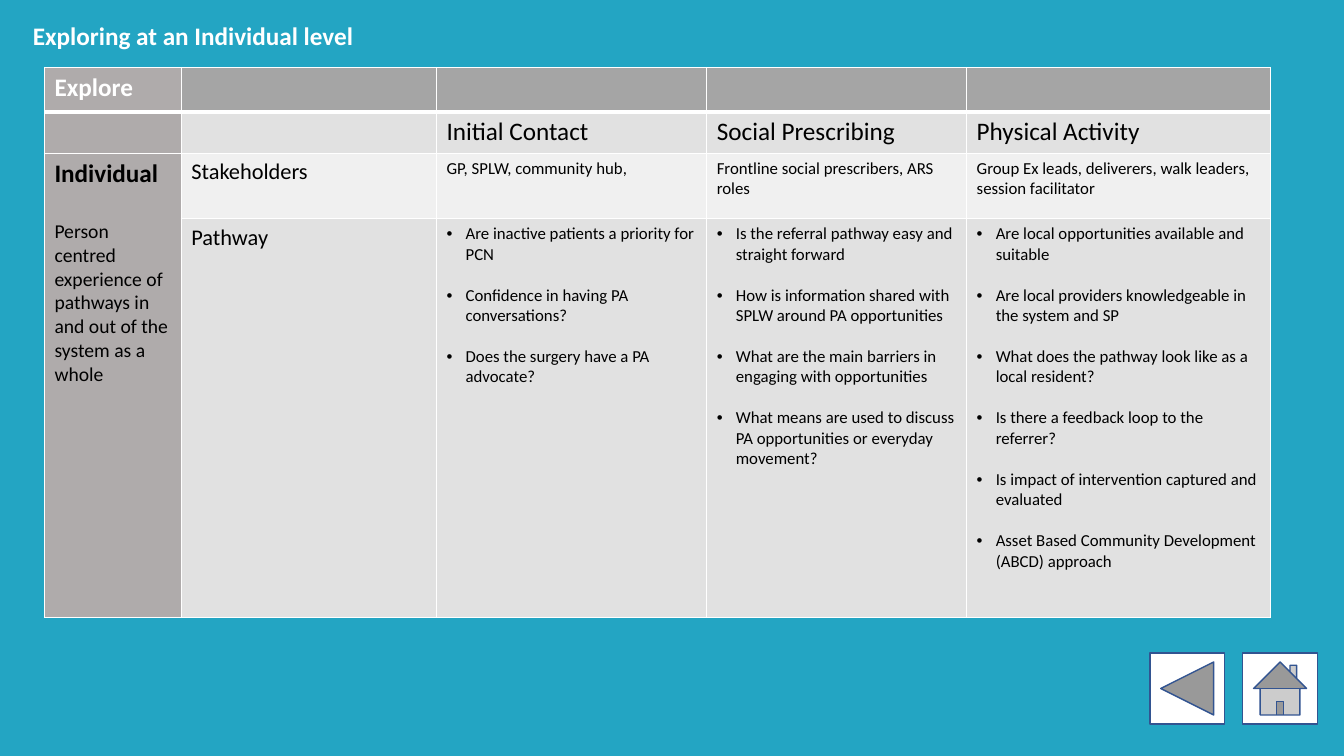
"""Build the slide on exploring social prescribing at an individual level."""
from lxml import etree
from pptx import Presentation
from pptx.dml.color import RGBColor
from pptx.enum.shapes import MSO_SHAPE
from pptx.oxml.ns import qn
from pptx.util import Cm, Pt

HOME = MSO_SHAPE.ACTION_BUTTON_HOME
BACK = MSO_SHAPE.ACTION_BUTTON_BACK_OR_PREVIOUS
TEAL = RGBColor(0x23, 0xA5, 0xC3)
WHITE = RGBColor(0xFF, 0xFF, 0xFF)
BLACK = RGBColor(0x00, 0x00, 0x00)
WARM_GREY = RGBColor(0xAF, 0xAB, 0xAB)
HEADER_GREY = RGBColor(0xA5, 0xA5, 0xA5)
LIGHT_GREY = RGBColor(0xE1, 0xE1, 0xE1)
PALE_GREY = RGBColor(0xF0, 0xF0, 0xF0)
BUTTON_BLUE = RGBColor(0x32, 0x54, 0x91)

COLUMN_WIDTHS = [3.45, 6.43, 6.81, 6.55, 7.65]
ROW_HEIGHTS = [1.12, 1.04, 1.65, 10.06]
ROW_FILLS = [HEADER_GREY, LIGHT_GREY, PALE_GREY, LIGHT_GREY]
ROWS = [
    ["Explore", "", "", "", ""],
    ["", "", "Initial Contact", "Social Prescribing", "Physical Activity"],
    ["Individual", "Stakeholders", "GP, SPLW, community hub,",
     "Frontline social prescribers, ARS roles",
     "Group Ex leads, deliverers, walk leaders, session facilitator"],
    ["", "Pathway", "", "", ""],
]
EXPERIENCE = "Person centred experience of pathways in and out of the system as a whole"
PATHWAY_QUESTIONS = [
    ["Are inactive patients a priority for PCN",
     "Confidence in having PA conversations?",
     "Does the surgery have a PA advocate?"],
    ["Is the referral pathway easy and straight forward",
     "How is information shared with SPLW around PA opportunities",
     "What are the main barriers in engaging with opportunities",
     "What means are used to discuss PA opportunities or everyday movement?"],
    ["Are local opportunities available and suitable",
     "Are local providers knowledgeable in the system and SP",
     "What does the pathway look like as a local resident?",
     "Is there a feedback loop to the referrer?",
     "Is impact of intervention captured and evaluated",
     "Asset Based Community Development (ABCD) approach"],
]


def add_text(paragraph, text, size, color=BLACK, bold=False):
    run = paragraph.add_run()
    run.text = text
    run.font.name = "Calibri"
    run.font.size = Pt(size)
    run.font.bold = bold
    run.font.color.rgb = color


def add_border(cell, side, width):
    line = etree.SubElement(cell._tc.get_or_add_tcPr(), qn(f"a:ln{side}"), w=str(Pt(width)))
    fill = etree.SubElement(line, qn("a:solidFill"))
    etree.SubElement(fill, qn("a:srgbClr"), val=str(WHITE))


prs = Presentation()
prs.slide_width = Cm(33.87)
prs.slide_height = Cm(19.05)
slide = prs.slides.add_slide(prs.slide_layouts[6])
slide.background.fill.solid()
slide.background.fill.fore_color.rgb = TEAL

table = slide.shapes.add_table(len(ROWS), len(COLUMN_WIDTHS), Cm(1.12), Cm(1.7),
                               Cm(sum(COLUMN_WIDTHS)), Cm(sum(ROW_HEIGHTS))).table
for column, width in zip(table.columns, COLUMN_WIDTHS):
    column.width = Cm(width)
for row, height in zip(table.rows, ROW_HEIGHTS):
    row.height = Cm(height)

for r, texts in enumerate(ROWS):
    for c, text in enumerate(texts):
        cell = table.cell(r, c)
        for side in "LRTB":
            under_header = (r, side) in [(0, "B"), (1, "T")]
            add_border(cell, side, 3 if under_header else 1)
        cell.fill.solid()
        cell.fill.fore_color.rgb = WARM_GREY if c == 0 else ROW_FILLS[r]
        if text:
            size = 18 if r < 2 or c == 0 else 16 if c == 1 else 12
            add_text(cell.text_frame.paragraphs[0], text, size,
                     WHITE if r == 0 else BLACK, c == 0)

individual = table.cell(2, 0)
individual.merge(table.cell(3, 0))
experience = individual.text_frame.add_paragraph()
experience.space_before = Pt(22)
add_text(experience, EXPERIENCE, 14)

for c, questions in enumerate(PATHWAY_QUESTIONS, start=2):
    frame = table.cell(3, c).text_frame
    for i, question in enumerate(questions):
        paragraph = frame.add_paragraph() if i else frame.paragraphs[0]
        paragraph.space_before = Pt(14.6 if i else 0)
        properties = paragraph._p.get_or_add_pPr()
        properties.set("marL", str(Cm(0.48)))
        properties.set("indent", str(-Cm(0.48)))
        etree.SubElement(properties, qn("a:buFont"), typeface="Arial")
        etree.SubElement(properties, qn("a:buChar"), char="•")
        add_text(paragraph, question, 12)

for kind, left in [(HOME, 31.32), (BACK, 28.98)]:
    button = slide.shapes.add_shape(kind, Cm(left), Cm(16.46), Cm(1.88), Cm(1.78))
    button.shadow.inherit = False
    button.fill.solid()
    button.fill.fore_color.rgb = WHITE
    button.line.color.rgb = BUTTON_BLUE
    button.line.width = Pt(1)

title = slide.shapes.add_textbox(Cm(0.58), Cm(0.38), Cm(16.94), Cm(1.02)).text_frame
title.word_wrap = True
add_text(title.paragraphs[0], "Exploring at an Individual level", 18, WHITE, True)

prs.save("out.pptx")
